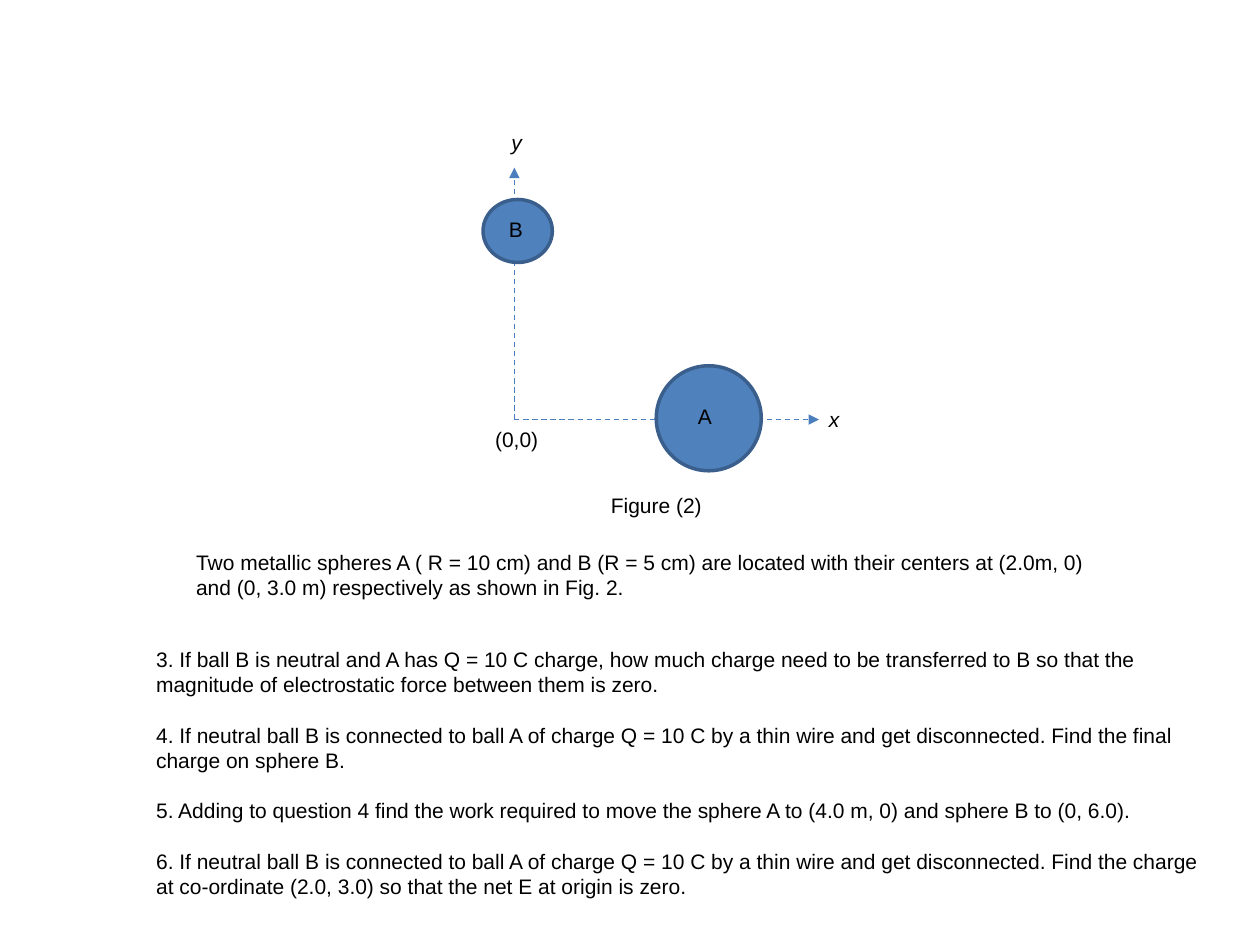
import pptx
import pptx.util
import pptx.dml.color
import pptx.enum.dml
import pptx.enum.shapes
import pptx.enum.text
import pptx.oxml
import pptx.oxml.ns

Pt = pptx.util.Pt
RGB = pptx.dml.color.RGBColor
BLACK = RGB(0x00, 0x00, 0x00)
BLUE = RGB(0x4F, 0x81, 0xBD)
EDGE = RGB(0x3A, 0x5F, 0x8C)
AXIS = RGB(0x4B, 0x7E, 0xBC)


def write(para, text, slant=False):
    """Add one 12 pt Arial run to the paragraph."""
    run = para.add_run()
    run.text = text
    run.font.name = "Arial"
    run.font.size = Pt(12)
    run.font.italic = slant
    run.font.color.rgb = BLACK


def add_tag(tree, text, left, top, width, height=21.8, slant=False, wrap=False):
    """Add a text box with a single run."""
    box = tree.add_textbox(Pt(left), Pt(top), Pt(width), Pt(height))
    box.text_frame.word_wrap = wrap
    write(box.text_frame.paragraphs[0], text, slant)


deck = pptx.Presentation()
deck.slide_width, deck.slide_height = Pt(720), Pt(540)
slide = deck.slides.add_slide(deck.slide_layouts[1])
title = slide.shapes.title
title.element.getparent().remove(title.element)

# Axes, balls and their labels form one group
figure = slide.shapes.add_group_shape().shapes
zero = (293.9, 239.8)
for tip in [(zero[0], 95.8), (468, zero[1])]:
    axis = figure.add_connector(
        pptx.enum.shapes.MSO_CONNECTOR.STRAIGHT, *map(Pt, zero + tip))
    axis.line.color.rgb = AXIS
    axis.line.width = Pt(0.75)
    axis.line.dash_style = pptx.enum.dml.MSO_LINE.DASH
    head = pptx.oxml.parse_xml(
        "<a:tailEnd %s type='triangle'/>" % pptx.oxml.ns.nsdecls("a"))
    axis.line._get_or_add_ln().append(head)
    axis._element.spPr.append(pptx.oxml.parse_xml(
        "<a:effectLst %s/>" % pptx.oxml.ns.nsdecls("a")))

for spot in [(375, 209, 60, 60), (276, 114, 39.6, 36)]:
    ball = figure.add_shape(
        pptx.enum.shapes.MSO_SHAPE.OVAL, *map(Pt, spot))
    ball.shadow.inherit = False
    ball.fill.solid()
    ball.fill.fore_color.rgb = BLUE
    ball.line.color.rgb = EDGE
    ball.line.width = Pt(2)

for text, left, top, width, slant in [
    ("(0,0)", 275.8, 240, 39.6, False),
    ("A", 391.7, 227, 22.3, False),
    ("B", 283.7, 120, 22.3, False),
    ("x", 466.6, 229, 20.9, True),
    ("y", 285.1, 70.6, 20.9, True),
    ("Figure (2)", 342, 278, 67, False),
]:
    add_tag(figure, text, left, top, width, slant=slant)

add_tag(
    slide.shapes,
    "Two metallic spheres A ( R = 10 cm) and B (R = 5 cm) are located with "
    "their centers at (2.0m, 0) and (0, 3.0 m) respectively as shown in Fig. 2.",
    105, 310.3, 540, 36, wrap=True)

# Questions
body = slide.placeholders[1]
body.left, body.top, body.width, body.height = map(Pt, (82, 365.8, 618, 152.6))
frame = body.text_frame
frame.word_wrap = True
frame.auto_size = pptx.enum.text.MSO_AUTO_SIZE.NONE
wire = ("If neutral ball B is connected to ball A of charge Q = 10 C by a thin "
        "wire and get disconnected. Find the ")
for num, text in enumerate([
    "If ball B is neutral and A has Q = 10 C charge, how much charge need to be "
    "transferred to B so that the magnitude of electrostatic force between them "
    "is zero.",
    wire + "final charge on sphere B.",
    "Adding to question 4 find the work required to move the sphere A to "
    "(4.0 m, 0) and sphere B to (0, 6.0).",
    wire + "charge at co-ordinate (2.0, 3.0) so that the net E at origin is zero.",
], 3):
    para = frame.paragraphs[0] if num == 3 else frame.add_paragraph()
    para.space_before = Pt(0 if num == 3 else 14.4)
    props = para._p.get_or_add_pPr()
    props.set("marL", "0")
    props.set("indent", "0")
    props.append(pptx.oxml.parse_xml(
        "<a:buNone %s/>" % pptx.oxml.ns.nsdecls("a")))
    write(para, f"{num}. {text}")

deck.save("out.pptx")
